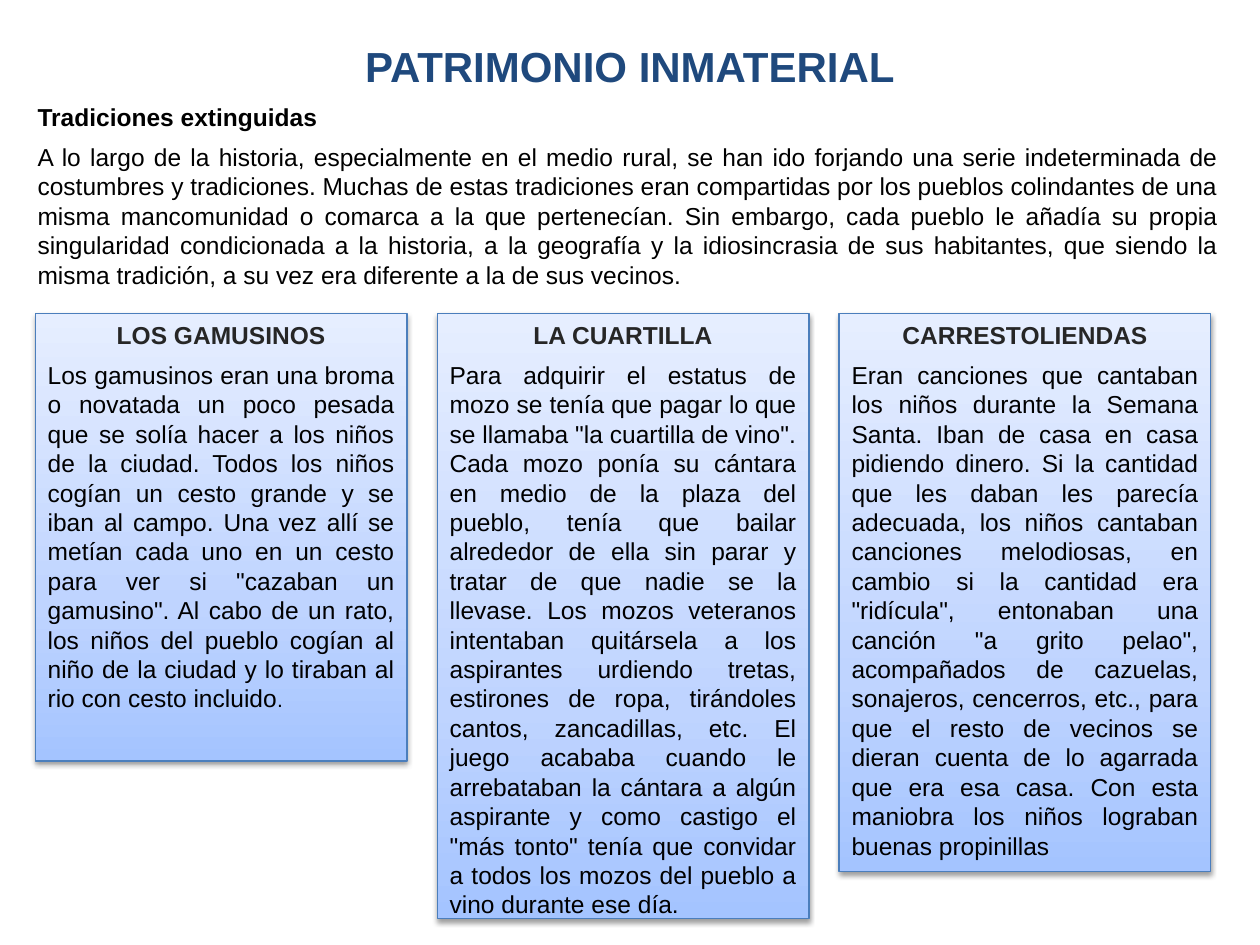
from copy import deepcopy
from dataclasses import dataclass

from lxml import etree
from pptx import Presentation
from pptx import util as u
from pptx.dml.color import RGBColor
from pptx.enum import shapes, text
from pptx.oxml.ns import qn

NAVY = RGBColor(0x1F, 0x49, 0x7D)
BLACK = RGBColor(0, 0, 0)
CHARCOAL = RGBColor(0x26, 0x26, 0x26)
BORDER = RGBColor(0x4B, 0x7E, 0xBC)
GRADIENT = (
    (0, RGBColor(0xA4, 0xC4, 0xFF)),
    (0.35, RGBColor(0xBF, 0xD4, 0xFF)),
    (1, RGBColor(0xE6, 0xEE, 0xFF)),
)
CARD_LEFT, CARD_TOP, CARD_WIDTH, CARD_PITCH = 0.28, 2.49, 2.95, 3.19
CENTER, JUSTIFY = text.PP_ALIGN.CENTER, text.PP_ALIGN.JUSTIFY


@dataclass(frozen=True)
class Tradition:
    name: str
    story: str
    height: float
    ending: str = ""


TRADITIONS = (
    Tradition(
        "LOS GAMUSINOS",
        "Los gamusinos eran una broma o novatada un poco pesada que se solía hacer a los niños "
        "de la ciudad. Todos los niños cogían un cesto grande y se iban al campo. Una vez allí "
        'se metían cada uno en un cesto para ver si "cazaban un gamusino". Al cabo de un rato, '
        "los niños del pueblo cogían al niño de la ciudad y lo tiraban al rio con cesto incluido",
        3.55,
        ".",
    ),
    Tradition(
        "LA CUARTILLA",
        "Para adquirir el estatus de mozo se tenía que pagar lo que se llamaba "
        '"la cuartilla de vino". Cada mozo ponía su cántara en medio de la plaza del pueblo, '
        "tenía que bailar alrededor de ella sin parar y tratar de que nadie se la llevase. "
        "Los mozos veteranos intentaban quitársela a los aspirantes urdiendo tretas, estirones "
        "de ropa, tirándoles cantos, zancadillas, etc. El juego acababa cuando le arrebataban "
        'la cántara a algún aspirante y como castigo el "más tonto" tenía que convidar a todos '
        "los mozos del pueblo a vino durante ese día.",
        4.8,
    ),
    Tradition(
        "CARRESTOLIENDAS",
        "Eran canciones que cantaban los niños durante la Semana Santa. Iban de casa en casa "
        "pidiendo dinero. Si la cantidad que les daban les parecía adecuada, los niños cantaban "
        'canciones melodiosas, en cambio si la cantidad era "ridícula", entonaban una canción '
        '"a grito pelao", acompañados de cazuelas, sonajeros, cencerros, etc., para que el '
        "resto de vecinos se dieran cuenta de lo agarrada que era esa casa. Con esta maniobra "
        "los niños lograban buenas propinillas",
        4.43,
    ),
)
INTRODUCTION = (
    "A lo largo de la historia, especialmente en el medio rural, se han ido forjando una serie "
    "indeterminada de costumbres y tradiciones. Muchas de estas tradiciones eran compartidas por "
    "los pueblos colindantes de una misma mancomunidad o comarca a la que pertenecían. Sin "
    "embargo, cada pueblo le añadía su propia singularidad condicionada a la historia, a la "
    "geografía y la idiosincrasia de sus habitantes, que siendo la misma tradición, a su vez era "
    "diferente a la de sus vecinos."
)


def write(paragraph, words: str, *, size: float = 14, color: RGBColor = BLACK,
          bold: bool = False, align=JUSTIFY, before: float = 0) -> None:
    paragraph.alignment = align
    paragraph.space_before = u.Pt(before)
    run = paragraph.add_run()
    run.text = words
    run.font.name = "Arial"
    run.font.size = u.Pt(size)
    run.font.bold = bold
    run.font.color.rgb = color


def add_text_frame(slide, left: float, top: float, width: float, height: float, anchor):
    box = slide.shapes.add_textbox(u.Inches(left), u.Inches(top), u.Inches(width), u.Inches(height))
    frame = box.text_frame
    frame.word_wrap = True
    frame.vertical_anchor = anchor
    return frame


def shade(card) -> None:
    card.fill.gradient()
    card.fill.gradient_angle = 90
    properties = card._element.spPr
    first_stop = properties.find(".//" + qn("a:gs"))
    first_stop.addnext(deepcopy(first_stop))
    for stop, (position, color) in zip(card.fill.gradient_stops, GRADIENT):
        stop.position = position
        stop.color.rgb = color
    card.line.color.rgb = BORDER
    card.line.width = u.Pt(0.75)
    card.shadow.inherit = False
    shadow = etree.SubElement(
        properties.find(qn("a:effectLst")), qn("a:outerShdw"),
        blurRad=str(u.Pt(3.1)), dist=str(u.Pt(1.6)), dir="5400000", rotWithShape="0",
    )
    tint = etree.SubElement(shadow, qn("a:srgbClr"), val="000000")
    etree.SubElement(tint, qn("a:alpha"), val="38000")


def add_card(slide, column: int, tradition: Tradition) -> None:
    card = slide.shapes.add_shape(
        shapes.MSO_SHAPE.RECTANGLE,
        u.Inches(CARD_LEFT + column * CARD_PITCH), u.Inches(CARD_TOP),
        u.Inches(CARD_WIDTH), u.Inches(tradition.height),
    )
    shade(card)
    frame = card.text_frame
    frame.word_wrap = True
    frame.vertical_anchor = text.MSO_ANCHOR.TOP
    write(frame.paragraphs[0], tradition.name, color=CHARCOAL, bold=True, align=CENTER)
    story = frame.add_paragraph()
    write(story, tradition.story, before=6)
    if tradition.ending:
        write(story, tradition.ending, size=12, before=6)


def main() -> None:
    deck = Presentation()
    deck.slide_width, deck.slide_height = u.Inches(10), u.Inches(7.5)
    slide = deck.slides.add_slide(deck.slide_layouts[6])

    title = add_text_frame(slide, 0.5, 0.13, 9, 0.78, text.MSO_ANCHOR.MIDDLE)
    write(title.paragraphs[0], "PATRIMONIO INMATERIAL", size=24, color=NAVY, bold=True, align=CENTER)

    introduction = add_text_frame(slide, 0.2, 0.76, 9.57, 1.65, text.MSO_ANCHOR.TOP)
    write(introduction.paragraphs[0], "Tradiciones extinguidas", bold=True)
    write(introduction.add_paragraph(), INTRODUCTION, before=6)

    for column, tradition in enumerate(TRADITIONS):
        add_card(slide, column, tradition)
    deck.save("out.pptx")


if __name__ == "__main__":
    main()
